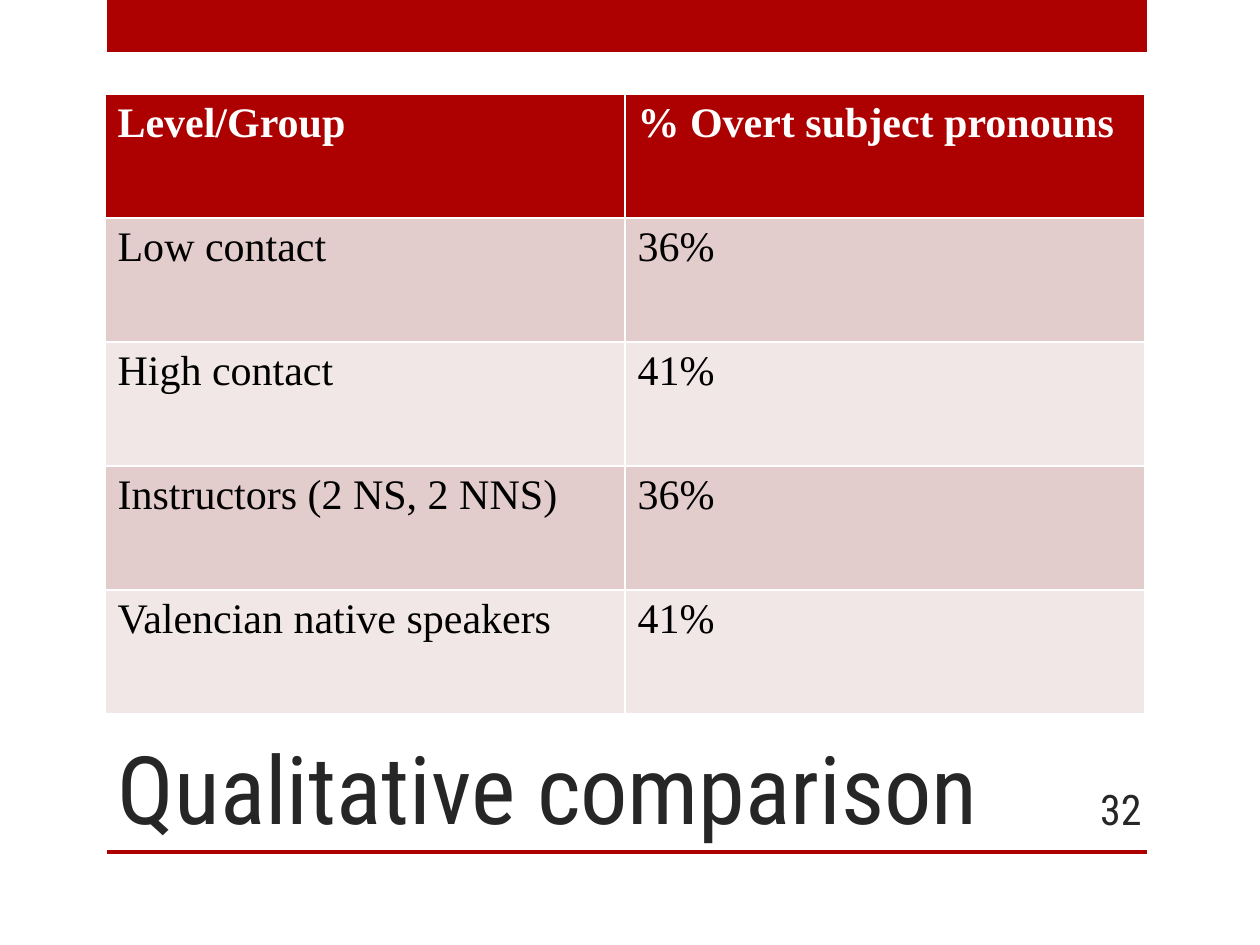
from dataclasses import dataclass

from pptx import Presentation
from pptx.dml.color import RGBColor
from pptx.enum.shapes import MSO_SHAPE
from pptx.enum.text import MSO_ANCHOR, MSO_AUTO_SIZE, PP_ALIGN
from pptx.util import Emu, Pt

RECTANGLE = MSO_SHAPE.RECTANGLE
BOTTOM, MIDDLE = MSO_ANCHOR.BOTTOM, MSO_ANCHOR.MIDDLE
LEFT, RIGHT = PP_ALIGN.LEFT, PP_ALIGN.RIGHT
NO_AUTOFIT = MSO_AUTO_SIZE.NONE
EMU_PER_PX = 914400 / 126
TITLE_ONLY = 5


@dataclass(frozen=True)
class Theme:
    red: str = "AD0101"
    ink: str = "262626"
    black: str = "000000"
    white: str = "FFFFFF"
    bands: tuple = ("E3CCCC", "F1E7E7")
    heading_font: str = "Roboto Condensed"
    table_font: str = "Times New Roman"
    title_size: int = 54
    text_size: int = 24


def px(length):
    return Emu(round(length * EMU_PER_PX))


class SlideBuilder:
    def __init__(self, deck, theme):
        self.theme = theme
        self.page = deck.slides.add_slide(deck.slide_layouts[TITLE_ONLY])

    def style(self, para, font, size, color, bold=False, align=LEFT):
        para.alignment = align
        para.font.name = font
        para.font.size = Pt(size)
        para.font.bold = bold
        para.font.color.rgb = RGBColor.from_string(color)

    def bar(self, *place):
        bar = self.page.shapes.add_shape(RECTANGLE, *map(px, place))
        bar.shadow.inherit = False
        bar.fill.solid()
        bar.fill.fore_color.rgb = RGBColor.from_string(self.theme.red)
        bar.line.fill.background()

    def heading_text(self, box, text, size, anchor, align):
        frame = box.text_frame
        frame.text = text
        frame.word_wrap = True
        frame.auto_size = NO_AUTOFIT
        frame.vertical_anchor = anchor
        self.style(frame.paragraphs[0], self.theme.heading_font, size,
                   self.theme.ink, align=align)

    def title(self, text, *place):
        box = self.page.shapes.title
        box.left, box.top, box.width, box.height = map(px, place)
        self.heading_text(box, text, self.theme.title_size, BOTTOM, LEFT)

    def page_number(self, text, *place):
        box = self.page.shapes.add_textbox(*map(px, place))
        self.heading_text(box, text, self.theme.text_size, MIDDLE, RIGHT)

    def table(self, rows, *place):
        theme = self.theme
        # The default table style supplies the white cell borders
        table = self.page.shapes.add_table(
            len(rows), len(rows[0]), *map(px, place)).table
        for r, row in enumerate(rows):
            header = r == 0
            fill = theme.red if header else theme.bands[(r - 1) % 2]
            color = theme.white if header else theme.black
            for c, text in enumerate(row):
                cell = table.cell(r, c)
                cell.text = text
                cell.fill.solid()
                cell.fill.fore_color.rgb = RGBColor.from_string(fill)
                self.style(cell.text_frame.paragraphs[0], theme.table_font,
                           theme.text_size, color, bold=header)


def main():
    deck = Presentation()
    deck.slide_width, deck.slide_height = px(1260), px(945)
    slide = SlideBuilder(deck, Theme())

    # Top band and rule under the title
    slide.bar(107, 0, 1040, 52)
    slide.bar(107, 850, 1040, 4)

    # Title below the table
    slide.title("Qualitative comparison", 105, 630, 935, 220)

    # Pronoun use by group
    slide.table([
        ("Level/Group", "% Overt subject pronouns"),
        ("Low contact", "36%"),
        ("High contact", "41%"),
        ("Instructors (2 NS, 2 NNS)", "36%"),
        ("Valencian native speakers", "41%"),
    ], 105, 94, 1040, 620)

    # Page number
    slide.page_number("32", 1050, 784, 104, 50)

    deck.save("out.pptx")


if __name__ == "__main__":
    main()
